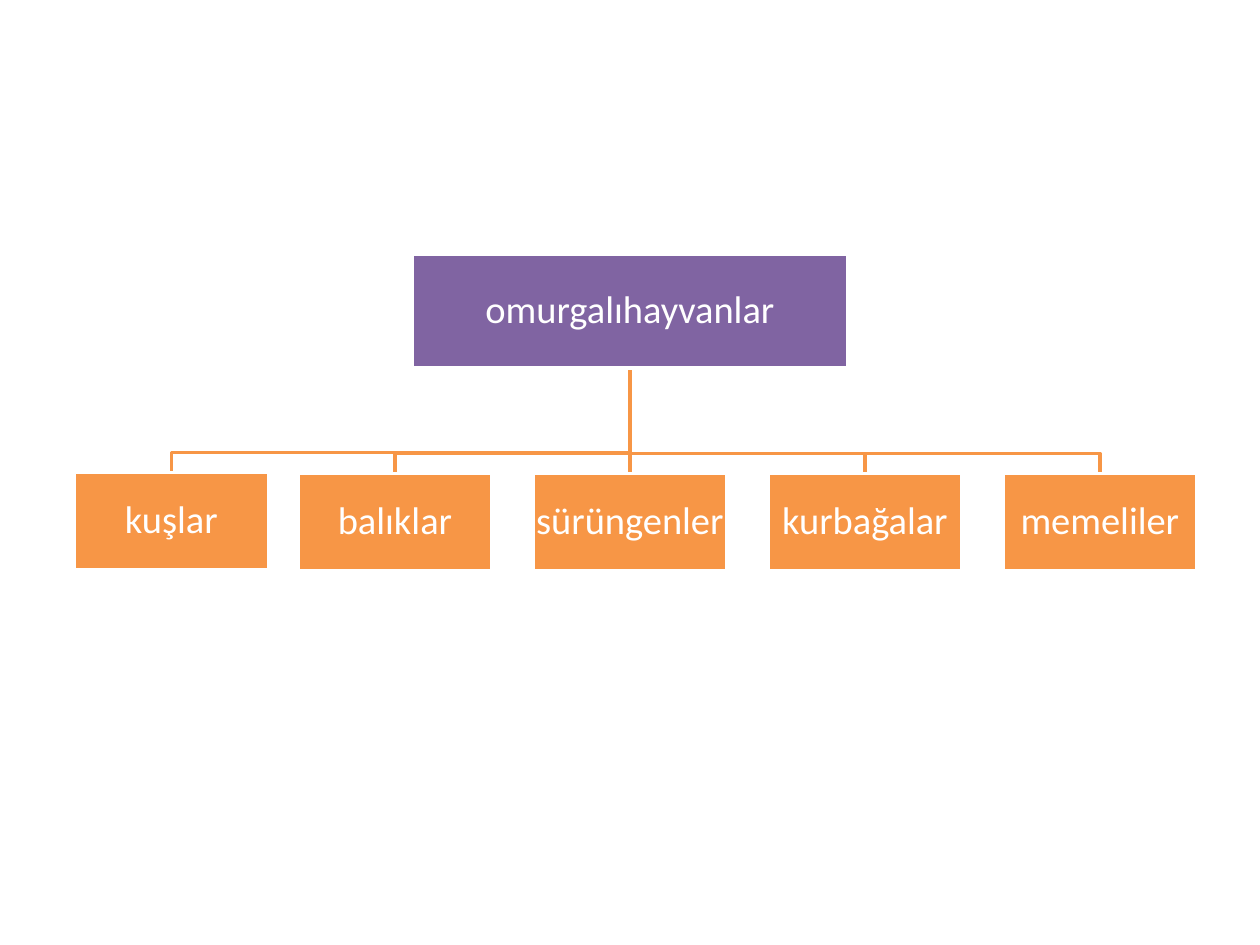
from dataclasses import dataclass

from pptx import Presentation
from pptx.dml.color import RGBColor
from pptx.enum.shapes import MSO_CONNECTOR, MSO_SHAPE
from pptx.enum.text import MSO_ANCHOR, PP_ALIGN
from pptx.oxml.ns import qn
from pptx.util import Inches, Pt
from lxml.etree import SubElement


@dataclass(frozen=True)
class Theme:
    root: RGBColor = RGBColor(0x80, 0x64, 0xA2)
    branch: RGBColor = RGBColor(0xF7, 0x96, 0x46)
    white: RGBColor = RGBColor(0xFF, 0xFF, 0xFF)
    font: str = "Calibri"
    size: int = 22
    line: int = 2


THEME = Theme()

# Grid of the tree, in inches
SLIDE_W, SLIDE_H = 10, 7.5
CENTER = SLIDE_W / 2
ROOT_TOP, ROOT_W, ROOT_H = 2.02, 3.46, 0.9
ROOT_BOTTOM = ROOT_TOP + ROOT_H
CHILD_TOP, CHILD_W, CHILD_H = 3.76, 1.54, 0.77
PITCH = 3.73 / 2
BUS_RISE = 0.16  # height of the horizontal run above a child

ROOT = "omurgalıhayvanlar"
CHILDREN = ["kuşlar", "balıklar", "sürüngenler", "kurbağalar", "memeliler"]
NUDGES = {"kuşlar": (0.09, -0.01)}  # moved off the grid


def child_anchor(index, name):
    """Return the middle of the child's top side."""
    dx, dy = NUDGES.get(name, (0, 0))
    offset = index - len(CHILDREN) // 2
    return CENTER + offset * PITCH + dx, CHILD_TOP + dy


def style_line(shape):
    shape.line.color.rgb = THEME.branch
    shape.line.width = Pt(THEME.line)


def add_elbow(page, x, y):
    """Draw the bent line from the root down to a child."""
    bend = y - BUS_RISE
    builder = page.shapes.build_freeform(Inches(CENTER), Inches(ROOT_BOTTOM))
    corners = [(CENTER, bend), (x, bend), (x, y)]
    builder.add_line_segments(
        [(Inches(px), Inches(py)) for px, py in corners], close=False)
    elbow = builder.convert_to_shape()
    elbow.fill.background()
    elbow.shadow.inherit = False
    style_line(elbow)


def add_stem(page, x, y):
    """Draw the straight line from the root down to the middle child."""
    stem = page.shapes.add_connector(
        MSO_CONNECTOR.STRAIGHT, Inches(CENTER), Inches(ROOT_BOTTOM),
        Inches(x), Inches(y))
    style_line(stem)
    SubElement(stem._element.spPr, qn("a:effectLst"))
    return stem


def add_box(page, text, center, top, width, height, fill):
    box = page.shapes.add_shape(
        MSO_SHAPE.RECTANGLE, Inches(center - width / 2), Inches(top),
        Inches(width), Inches(height))
    box.shadow.inherit = False
    box.fill.solid()
    box.fill.fore_color.rgb = fill
    box.line.color.rgb = THEME.white
    box.line.width = Pt(THEME.line)

    frame = box.text_frame
    frame.word_wrap = True
    frame.vertical_anchor = MSO_ANCHOR.MIDDLE
    frame.margin_left = frame.margin_right = Inches(0.02)
    frame.margin_top = frame.margin_bottom = Inches(0.02)
    para = frame.paragraphs[0]
    para.text = text
    para.alignment = PP_ALIGN.CENTER
    para.line_spacing = 0.9
    para.font.name = THEME.font
    para.font.size = Pt(THEME.size)
    para.font.color.rgb = THEME.white
    return box


def main():
    deck = Presentation()
    deck.slide_width, deck.slide_height = Inches(SLIDE_W), Inches(SLIDE_H)
    page = deck.slides.add_slide(deck.slide_layouts[6])
    anchors = [child_anchor(i, name) for i, name in enumerate(CHILDREN)]

    # Lines lie behind the boxes, so that the white edges cover their ends
    for x, y in reversed(anchors):
        if x == CENTER:
            stem = add_stem(page, x, y)
        else:
            add_elbow(page, x, y)

    # Boxes
    root = add_box(page, ROOT, CENTER, ROOT_TOP, ROOT_W, ROOT_H, THEME.root)
    boxes = [add_box(page, name, x, y, CHILD_W, CHILD_H, THEME.branch)
             for name, (x, y) in zip(CHILDREN, anchors)]

    # Join the straight line to the root and the middle child
    stem.begin_connect(root, 2)
    stem.end_connect(boxes[len(boxes) // 2], 0)

    deck.save("out.pptx")


if __name__ == "__main__":
    main()
